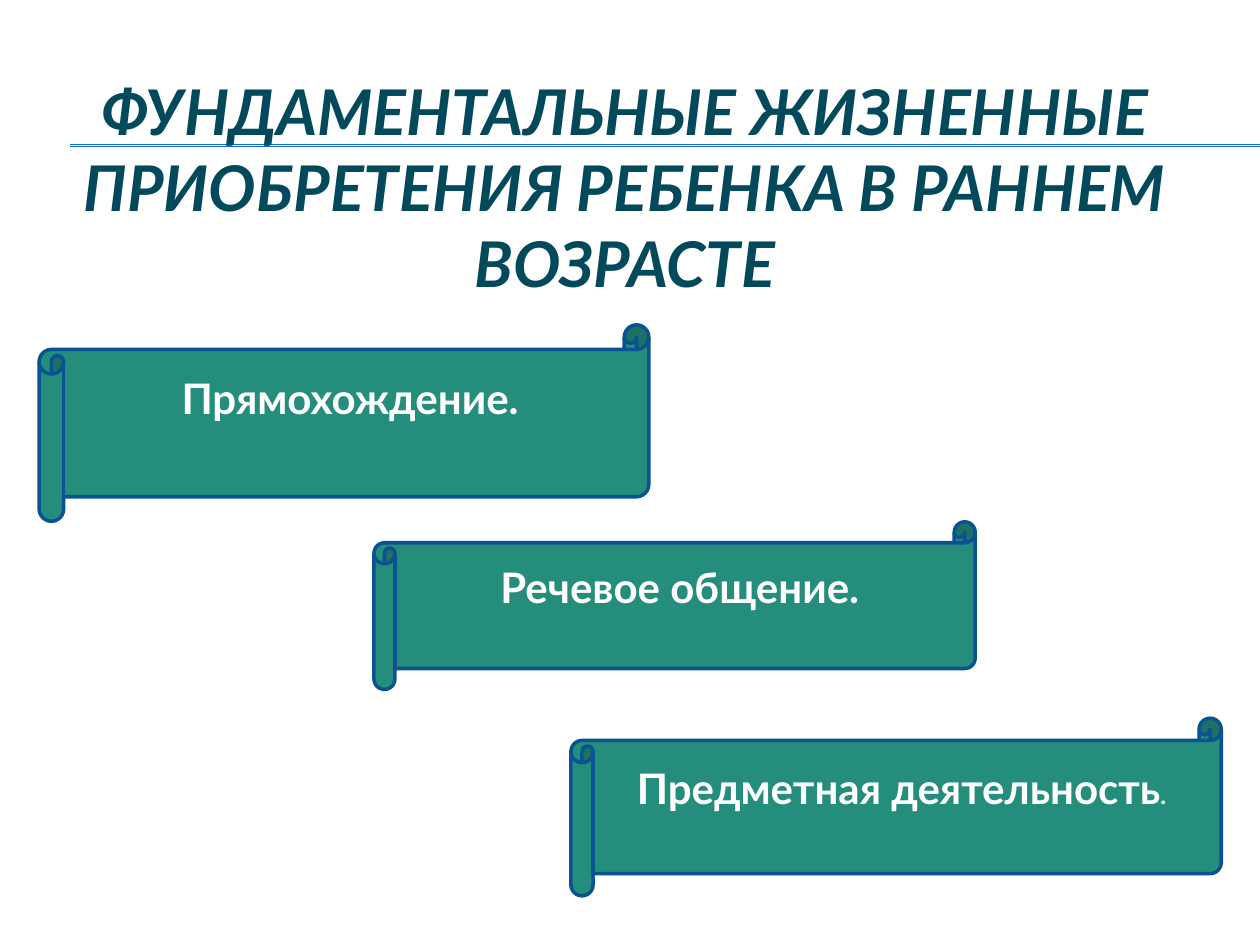
from lxml.etree import SubElement
from pptx import Presentation
from pptx.dml.color import RGBColor
from pptx.enum.shapes import MSO_CONNECTOR, MSO_SHAPE
from pptx.enum.text import MSO_ANCHOR, PP_ALIGN
from pptx.oxml.ns import qn
from pptx.util import Cm, Pt

TITLE = "ФУНДАМЕНТАЛЬНЫЕ ЖИЗНЕННЫЕ ПРИОБРЕТЕНИЯ РЕБЕНКА В РАННЕМ ВОЗРАСТЕ"
TITLE_AREA = (1.19, 0.76, 22.81, 5.99)
RULE_HEIGHTS = (2.92, 2.95)
SCROLLS = [
    ([("Прямохождение.", 24)], (0.79, 6.55, 12.29, 3.96), 1.14),
    ([("Речевое общение.", 24)], (7.54, 10.52, 12.12, 3.38), 0.89),
    ([("Предметная деятельность", 24), (".", 14)], (11.51, 14.48, 13.11, 3.58), 0.89),
]


def color(value):
    return RGBColor.from_string(value)


def write(shape, spans, text_color, italic=False):
    frame = shape.text_frame
    frame.word_wrap = True
    frame.vertical_anchor = MSO_ANCHOR.MIDDLE
    para = frame.paragraphs[0]
    para.alignment = PP_ALIGN.CENTER
    para.font.name = "Lato"
    para.font.bold = True
    para.font.italic = italic
    para.font.color.rgb = color(text_color)
    for text, size in spans:
        span = para.add_run()
        span.text = text
        span.font.size = Pt(size)


def add_rule(page, height):
    rule = page.shapes.add_connector(
        MSO_CONNECTOR.STRAIGHT, Cm(1.42), Cm(height), Cm(25.4), Cm(height))
    rule.line.color.rgb = color("0F6FC6")
    rule.line.width = Pt(0.75)
    SubElement(rule._element.spPr, qn("a:effectLst"))


def add_scroll(page, spans, area, bottom_margin):
    scroll = page.shapes.add_shape(MSO_SHAPE.HORIZONTAL_SCROLL, *map(Cm, area))
    scroll.shadow.inherit = False
    scroll.fill.solid()
    scroll.fill.fore_color.rgb = color("258D7C")
    scroll.line.color.rgb = color("0B5292")
    scroll.line.width = Pt(2)
    write(scroll, spans, "FFFFFF")
    scroll.text_frame.margin_bottom = Cm(bottom_margin)


def main():
    deck = Presentation()
    deck.slide_width, deck.slide_height = Cm(25.4), Cm(19.05)
    page = deck.slides.add_slide(deck.slide_layouts[6])
    for height in RULE_HEIGHTS:
        add_rule(page, height)
    title = page.shapes.add_textbox(*map(Cm, TITLE_AREA))
    write(title, [(TITLE, 36)], "03495C", italic=True)
    for spans, area, bottom_margin in SCROLLS:
        add_scroll(page, spans, area, bottom_margin)
    deck.save("out.pptx")


if __name__ == "__main__":
    main()
